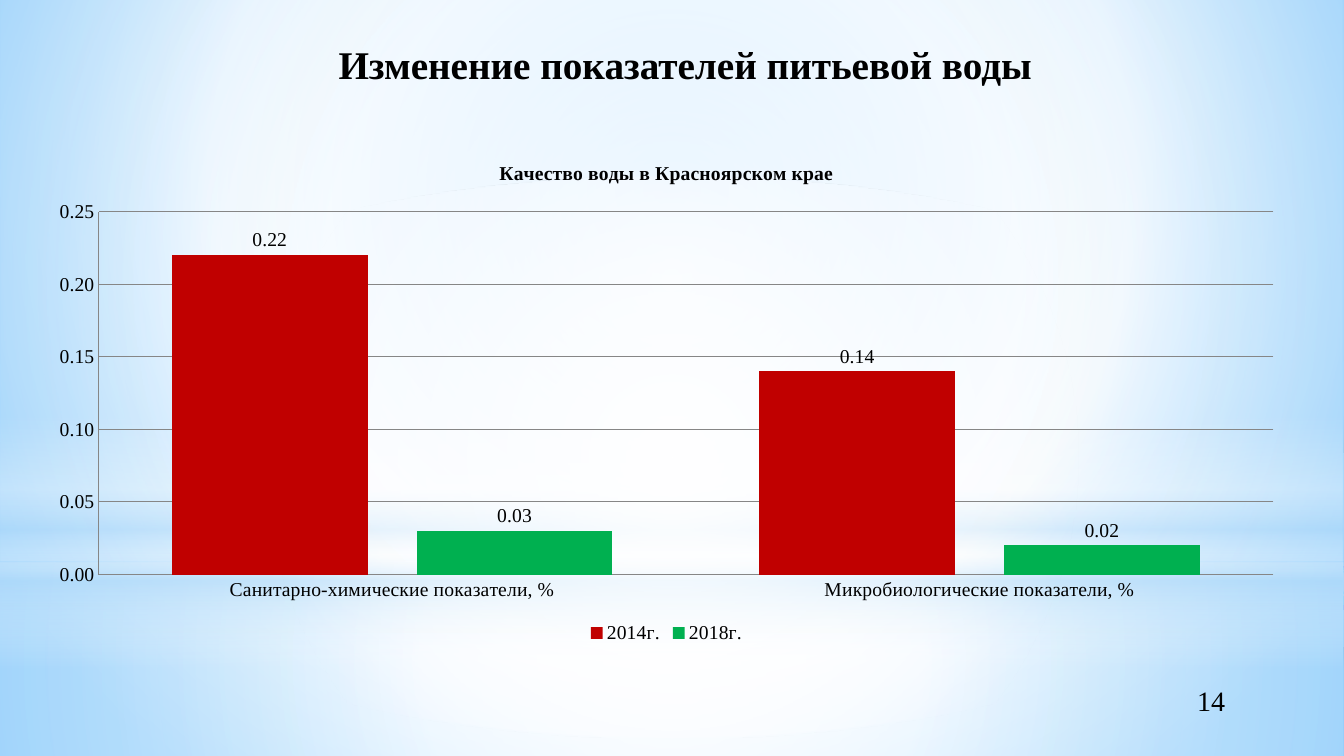
from lxml import etree
from pptx import Presentation
from pptx.chart.data import CategoryChartData
from pptx.dml.color import RGBColor
from pptx.enum.chart import (XL_CHART_TYPE, XL_LABEL_POSITION as LABEL_POS,
                             XL_LEGEND_POSITION as LEGEND_POS, XL_TICK_MARK as TICK)
from pptx.enum.shapes import MSO_SHAPE as SHAPE
from pptx.enum.text import MSO_ANCHOR as ANCHOR, PP_ALIGN as ALIGN
from pptx.oxml.ns import qn
from pptx.util import Inches, Pt

FONT = "Times New Roman"
TITLE = "Изменение показателей питьевой воды"
PAGE = "14"
CHART_TITLE = "Качество воды в Красноярском крае"
INDICATORS = ["Санитарно-химические показатели, %", "Микробиологические показатели, %"]
YEARS = [("2014г.", (0.22, 0.14), "C00000"), ("2018г.", (0.03, 0.02), "00B050")]

# Gradient stops: position %, colour, opacity %
SKY = [(0, "9ED5FF", 100), (60, "FFFFFF", 100), (100, "5BB9FF", 100)]
SKY_CENTRE = (20, 10, 20, 60)
MIDDLE = (50, 50, 50, 50)
# Glow layers: shape, box, stops, centre (None for a vertical gradient)
GLOWS = [
    (SHAPE.RECTANGLE, (0, 5.58, 13.33, 1.92),
     [(0, "FFFFFF", 91), (37, "FFFFFF", 76), (100, "B4DCFA", 79)], MIDDLE),
    (SHAPE.RECTANGLE, (0, 0, 13.33, 5.58),
     [(0, "FFFFFF", 89), (48, "FFFFFF", 62), (100, "B4DCFA", 79)], MIDDLE),
    (SHAPE.RECTANGLE, (0, 4.12, 13.33, 2.5),
     [(0, "FFFFFF", 0), (29, "FFFFFF", 30), (45, "B4DCFA", 40),
      (55, "FFFFFF", 26), (65, "B4DCFA", 60), (100, "FFFFFF", 0)], None),
    (SHAPE.OVAL, (0, 1.75, 13.33, 5.58),
     [(0, "FFFFFF", 100), (56, "FFFFFF", 0)], MIDDLE),
]


def rgb(value):
    return RGBColor.from_string(value)


def inches(box):
    return [Inches(length) for length in box]


def style(font, size, bold=False):
    font.name, font.size, font.bold = FONT, Pt(size), bold
    font.color.rgb = rgb("000000")


def set_gradient(fill, owner, stops, centre):
    """Swap the solid fill of owner for a gradient."""
    fill.solid()
    solid = next(owner.iter(qn("a:solidFill")))
    gradient = etree.Element(qn("a:gradFill"), rotWithShape="1")
    stop_list = etree.SubElement(gradient, qn("a:gsLst"))
    for position, colour, opacity in stops:
        stop = etree.SubElement(stop_list, qn("a:gs"), pos=str(position * 1000))
        tint = etree.SubElement(stop, qn("a:srgbClr"), val=colour)
        if opacity < 100:
            etree.SubElement(tint, qn("a:alpha"), val=str(opacity * 1000))
    if centre:
        route = etree.SubElement(gradient, qn("a:path"), path="circle")
        sides = {side: str(part * 1000) for side, part in zip("ltrb", centre)}
        etree.SubElement(route, qn("a:fillToRect"), **sides)
    else:
        etree.SubElement(gradient, qn("a:lin"), ang="5400000", scaled="0")
    solid.getparent().replace(solid, gradient)


def add_backdrop(slide):
    background = slide.background.fill
    set_gradient(background, slide.element.cSld.bg, SKY, SKY_CENTRE)
    for kind, box, stops, centre in GLOWS:
        glow = slide.shapes.add_shape(kind, *inches(box))
        glow.shadow.inherit = False
        glow.line.fill.background()
        set_gradient(glow.fill, glow.element.spPr, stops, centre)


def add_heading(slide):
    heading = slide.shapes.title
    heading.left, heading.top, heading.width, heading.height = inches((0.41, 0.35, 12.77, 0.88))
    slide.shapes.element.append(heading.element)  # in front of the glows
    heading.text_frame.text = TITLE
    heading.text_frame.vertical_anchor = ANCHOR.TOP
    line = heading.text_frame.paragraphs[0]
    line.alignment = ALIGN.CENTER
    style(line.font, 28, True)


def add_page_number(slide):
    frame = slide.shapes.add_textbox(*inches((0.91, 6.75, 11.34, 0.4))).text_frame
    frame.word_wrap = True
    frame.vertical_anchor = ANCHOR.MIDDLE
    frame.text = PAGE
    frame.paragraphs[0].alignment = ALIGN.RIGHT
    style(frame.paragraphs[0].font, 20)


def add_water_chart(slide):
    data = CategoryChartData(number_format="0.00")
    data.categories = INDICATORS
    for year, shares, _ in YEARS:
        data.add_series(year, shares)
    chart = slide.shapes.add_chart(XL_CHART_TYPE.COLUMN_CLUSTERED,
                                   *inches((0.34, 1.4, 12.54, 5.03)), data).chart
    style(chart.font, 14)

    # Title and legend
    chart.has_title = True
    chart.chart_title.text_frame.text = CHART_TITLE
    style(chart.chart_title.text_frame.paragraphs[0].font, 14, True)
    chart.chart_title.include_in_layout = False
    chart.has_legend = True
    chart.legend.position = LEGEND_POS.BOTTOM
    chart.legend.include_in_layout = False

    # Axes
    shares_axis = chart.value_axis
    shares_axis.minimum_scale, shares_axis.maximum_scale, shares_axis.major_unit = 0, 0.25, 0.05
    shares_axis.tick_labels.number_format = "0.00"
    shares_axis.tick_labels.number_format_is_linked = False
    shares_axis.has_major_gridlines = True
    for axis in (chart.category_axis, shares_axis):
        axis.major_tick_mark = axis.minor_tick_mark = TICK.NONE
    for rule in (chart.category_axis.format, shares_axis.format,
                 shares_axis.major_gridlines.format):
        rule.line.color.rgb = rgb("868686")
        rule.line.width = Pt(0.75)

    # Columns
    plot = chart.plots[0]
    plot.gap_width, plot.overlap, plot.vary_by_categories = 75, -25, False
    for columns, (_, _, colour) in zip(plot.series, YEARS):
        columns.format.fill.solid()
        columns.format.fill.fore_color.rgb = rgb(colour)
        labels = columns.data_labels
        labels.show_value = True
        labels.position = LABEL_POS.OUTSIDE_END
        labels.number_format = "0.00"
        labels.number_format_is_linked = False


def main():
    deck = Presentation()
    deck.slide_width, deck.slide_height = inches((13.33, 7.5))
    slide = deck.slides.add_slide(deck.slide_layouts[5])
    add_backdrop(slide)
    add_page_number(slide)
    add_heading(slide)
    add_water_chart(slide)
    deck.save("out.pptx")


if __name__ == "__main__":
    main()
